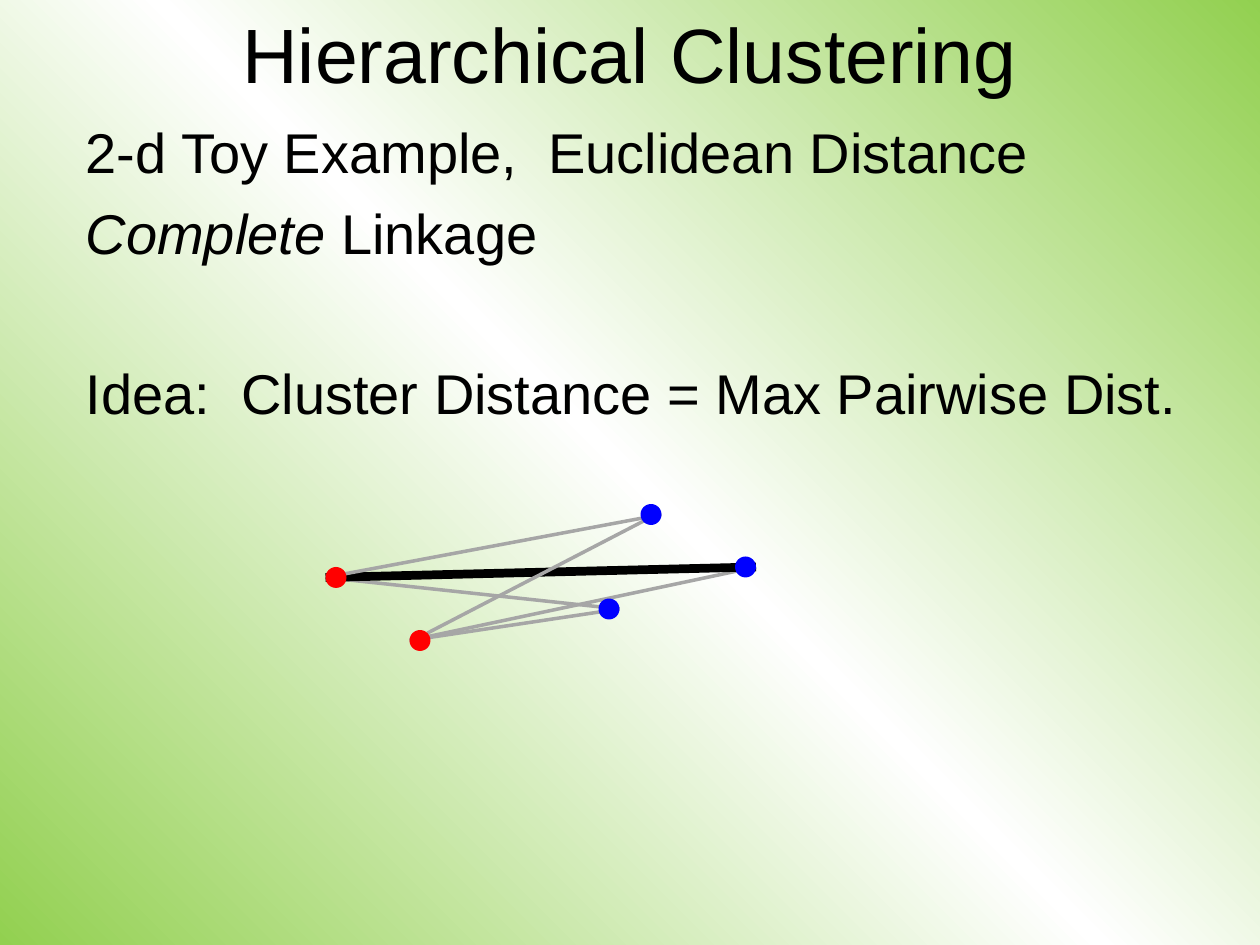
"""Build the complete-linkage slide: two clusters and their pairwise distances."""
from dataclasses import dataclass

from lxml.etree import SubElement
from pptx import Presentation
from pptx.dml.color import RGBColor
from pptx.enum.shapes import MSO_CONNECTOR, MSO_SHAPE
from pptx.enum.text import MSO_ANCHOR, MSO_AUTO_SIZE, PP_ALIGN
from pptx.oxml import parse_xml
from pptx.oxml.ns import nsdecls, qn
from pptx.util import Cm, Pt


@dataclass(frozen=True)
class Theme:
    font: str = "Arial"
    ink: str = "000000"
    gray: str = "A6A6A6"
    red: str = "FF0000"
    blue: str = "0000FF"
    green: str = "92D050"
    white: str = "FFFFFF"
    head: int = 44
    body: int = 32
    thin: int = 2
    thick: int = 5


@dataclass(frozen=True)
class Dot:
    x: float
    y: float
    color: str


@dataclass(frozen=True)
class Link:
    start: tuple[float, float]
    end: tuple[float, float]
    color: str
    width: int


@dataclass(frozen=True)
class Line:
    words: tuple[str, ...]
    gap: float = 8


THEME = Theme()
UNIT = 2.54 / 12
LEFT = Dot(32, 55, THEME.red)
LOW = Dot(40, 61, THEME.red)
TOP = Dot(62, 49, THEME.blue)
MID = Dot(58, 58, THEME.blue)
FAR = Dot(71, 54, THEME.blue)
DOTS = (LEFT, LOW, TOP, MID, FAR)


def span(one: Dot, two: Dot, color: str = THEME.gray, width: int = THEME.thin) -> Link:
    """Link the left edge of one dot to the right edge of another."""
    return Link((one.x - 1, one.y), (two.x + 1, two.y), color, width)


LINKS = (
    span(LOW, MID),
    span(LEFT, MID),
    span(LOW, FAR),
    span(LEFT, FAR, THEME.ink, THEME.thick),
    span(LEFT, TOP),
    Link((LOW.x + 0.7, LOW.y - 0.7), (TOP.x + 0.5, TOP.y), THEME.gray, THEME.thin),
)
LINES = (
    Line(("2-d Toy Example,  Euclidean Distance",), 0),
    Line(("Complete", " Linkage")),
    Line(("Idea:  Cluster Distance = Max Pairwise Dist.",), 53),
)


def grid(value: float) -> Cm:
    """Turn grid units into a length."""
    return Cm(value * UNIT)


def style(font, size: int) -> None:
    """Apply the theme font."""
    font.name = THEME.font
    font.size = Pt(size)
    font.color.rgb = RGBColor.from_string(THEME.ink)


def place(shape, box: tuple[float, float, float, float]) -> None:
    """Move and size a shape, in centimetres."""
    shape.left, shape.top, shape.width, shape.height = map(Cm, box)


def add_back(slide) -> None:
    """Fill the background with a diagonal gradient."""
    tones = ((0, THEME.green), (50, THEME.white), (100, THEME.green))
    stops = "".join(
        f'<a:gs pos="{pos * 1000}"><a:srgbClr val="{tone}"/></a:gs>' for pos, tone in tones
    )
    back = parse_xml(
        f'<p:bg {nsdecls("p", "a")}><p:bgPr><a:gradFill rotWithShape="1">'
        f'<a:gsLst>{stops}</a:gsLst><a:lin ang="{135 * 60000}" scaled="0"/>'
        "</a:gradFill><a:effectLst/></p:bgPr></p:bg>"
    )
    slide.element.cSld.insert(0, back)


def add_link(slide, link: Link) -> None:
    """Draw one distance line."""
    ends = map(grid, (*link.start, *link.end))
    line = slide.shapes.add_connector(MSO_CONNECTOR.STRAIGHT, *ends)
    line.line.color.rgb = RGBColor.from_string(link.color)
    line.line.width = Pt(link.width)
    SubElement(line.element.spPr, qn("a:effectLst"))


def add_dot(slide, dot: Dot) -> None:
    """Draw one data point."""
    shape = slide.shapes.add_shape(
        MSO_SHAPE.OVAL, grid(dot.x - 1), grid(dot.y - 1), grid(2), grid(2)
    )
    shape.shadow.inherit = False
    shape.fill.solid()
    shape.fill.fore_color.rgb = RGBColor.from_string(dot.color)
    shape.line.fill.background()


def set_title(slide, text: str) -> None:
    """Fill and place the title."""
    title = slide.shapes.title
    place(title, (1.9, 0.21, 21.6, 1.7))
    frame = title.text_frame
    frame.text = text
    frame.auto_size = MSO_AUTO_SIZE.NONE
    frame.vertical_anchor = MSO_ANCHOR.MIDDLE
    frame.paragraphs[0].alignment = PP_ALIGN.CENTER
    style(frame.paragraphs[0].runs[0].font, THEME.head)


def add_body(slide, lines: tuple[Line, ...]) -> None:
    """Write the body lines, with the first words of a split line in italics."""
    box = slide.shapes.add_textbox(Cm(1.48), Cm(2.24), Cm(23.5), Cm(15.75))
    frame = box.text_frame
    frame.word_wrap = True
    for rank, line in enumerate(lines):
        para = frame.add_paragraph() if rank else frame.paragraphs[0]
        para.space_before = Pt(line.gap)
        for text in line.words:
            run = para.add_run()
            run.text = text
            style(run.font, THEME.body)
        if len(line.words) > 1:
            para.runs[0].font.italic = True


def main() -> None:
    """Build and save the slide."""
    deck = Presentation()
    deck.slide_width, deck.slide_height = Cm(25.4), Cm(19.05)
    slide = deck.slides.add_slide(deck.slide_layouts[5])
    add_back(slide)
    for link in LINKS:
        add_link(slide, link)
    set_title(slide, "Hierarchical Clustering")
    add_body(slide, LINES)
    for dot in DOTS:
        add_dot(slide, dot)
    deck.save("out.pptx")


if __name__ == "__main__":
    main()
